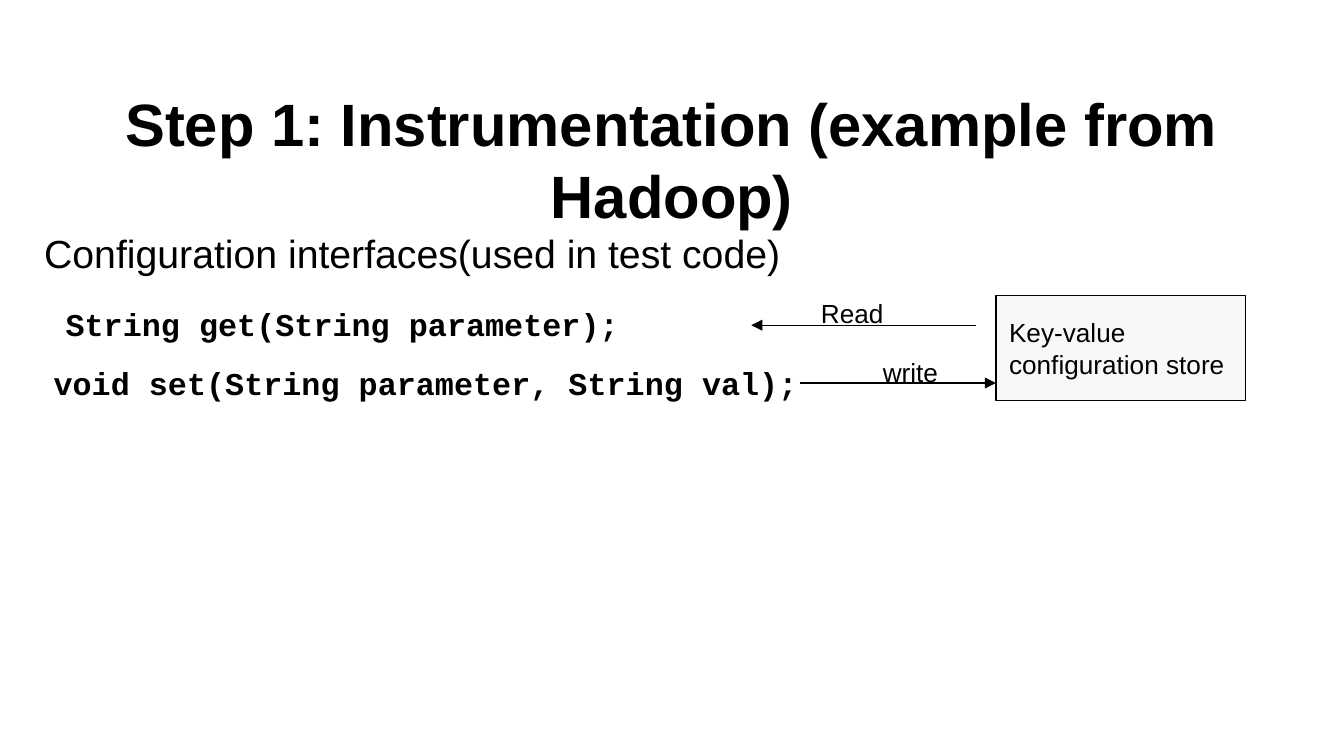
from dataclasses import dataclass

from lxml import etree
from pptx import Presentation
from pptx.dml.color import RGBColor
from pptx.enum.shapes import MSO_CONNECTOR, MSO_SHAPE
from pptx.enum.text import MSO_ANCHOR, PP_ALIGN
from pptx.oxml.ns import qn
from pptx.util import Inches, Pt

RECTANGLE = MSO_SHAPE.RECTANGLE
STRAIGHT = MSO_CONNECTOR.STRAIGHT
TOP, MIDDLE = MSO_ANCHOR.TOP, MSO_ANCHOR.MIDDLE
LEFT, CENTER = PP_ALIGN.LEFT, PP_ALIGN.CENTER

COLUMNS, ROWS = 100, 56.25
SLIDE_WIDTH = Inches(10)
SLIDE_HEIGHT = SLIDE_WIDTH * 9 // 16


@dataclass(frozen=True)
class Theme:
    ink: RGBColor = RGBColor(0, 0, 0)
    box_fill: RGBColor = RGBColor(0xF8, 0xF8, 0xF8)
    body_font: str = "Arial"
    code_font: str = "Courier New"
    title_size: float = 32
    body_size: float = 21
    code_size: float = 17
    label_size: float = 14
    line_width: float = 0.75
    margin: float = 1


THEME = Theme()


def across(columns):
    return round(SLIDE_WIDTH * columns / COLUMNS)


def down(rows):
    return round(SLIDE_HEIGHT * rows / ROWS)


def place(column, row, width, height):
    return across(column), down(row), across(width), down(height)


def write_text(shape, text, size=THEME.label_size, font=THEME.body_font, bold=False,
               align=LEFT, anchor=TOP):
    frame = shape.text_frame
    frame.word_wrap = True
    frame.vertical_anchor = anchor
    frame.margin_left = frame.margin_right = across(THEME.margin)
    frame.margin_top = frame.margin_bottom = down(THEME.margin)
    paragraph = frame.paragraphs[0]
    paragraph.alignment = align
    run = paragraph.add_run()
    run.text = text
    run.font.size = Pt(size)
    run.font.name = font
    run.font.bold = bold
    run.font.color.rgb = THEME.ink


def add_text(slide, area, text, **text_format):
    write_text(slide.shapes.add_textbox(*place(*area)), text, **text_format)


def add_code(slide, area, text):
    add_text(slide, area, text, size=THEME.code_size, font=THEME.code_font, bold=True)


def style_line(line):
    line.color.rgb = THEME.ink
    line.width = Pt(THEME.line_width)


def add_box(slide, area, text):
    box = slide.shapes.add_shape(RECTANGLE, *place(*area))
    box.shadow.inherit = False
    box.fill.solid()
    box.fill.fore_color.rgb = THEME.box_fill
    style_line(box.line)
    write_text(box, text, anchor=MIDDLE)


def add_arrow(slide, start_column, end_column, row):
    arrow = slide.shapes.add_connector(
        STRAIGHT, across(start_column), down(row), across(end_column), down(row))
    style_line(arrow.line)
    properties = arrow._element.spPr
    etree.SubElement(properties.find(qn("a:ln")), qn("a:tailEnd"), type="triangle")
    etree.SubElement(properties, qn("a:effectLst"))


def main():
    presentation = Presentation()
    presentation.slide_width = SLIDE_WIDTH
    presentation.slide_height = SLIDE_HEIGHT
    slide = presentation.slides.add_slide(presentation.slide_layouts[6])

    add_text(slide, (5, 7.4, 90, 8.8), "Step 1: Instrumentation (example from Hadoop)",
             size=THEME.title_size, bold=True, align=CENTER, anchor=MIDDLE)
    add_text(slide, (2.3, 16.1, 93.1, 40.6), "Configuration interfaces(used in test code)",
             size=THEME.body_size)

    store_left = 74.1
    add_box(slide, (store_left, 22, 18.6, 7.8), "Key-value configuration store")
    add_arrow(slide, 72.6, 55.9, 24.2)
    add_text(slide, (60.1, 21.1, 10.4, 4.4), "Read")
    add_arrow(slide, 59.5, store_left, 28.5)
    add_text(slide, (64.7, 25.5, 7.9, 4.4), "write")

    add_code(slide, (3.9, 21.7, 48.6, 4.9), "String get(String parameter);")
    add_code(slide, (3, 26.1, 60.1, 4.9), "void set(String parameter, String val);")

    presentation.save("out.pptx")


if __name__ == "__main__":
    main()
